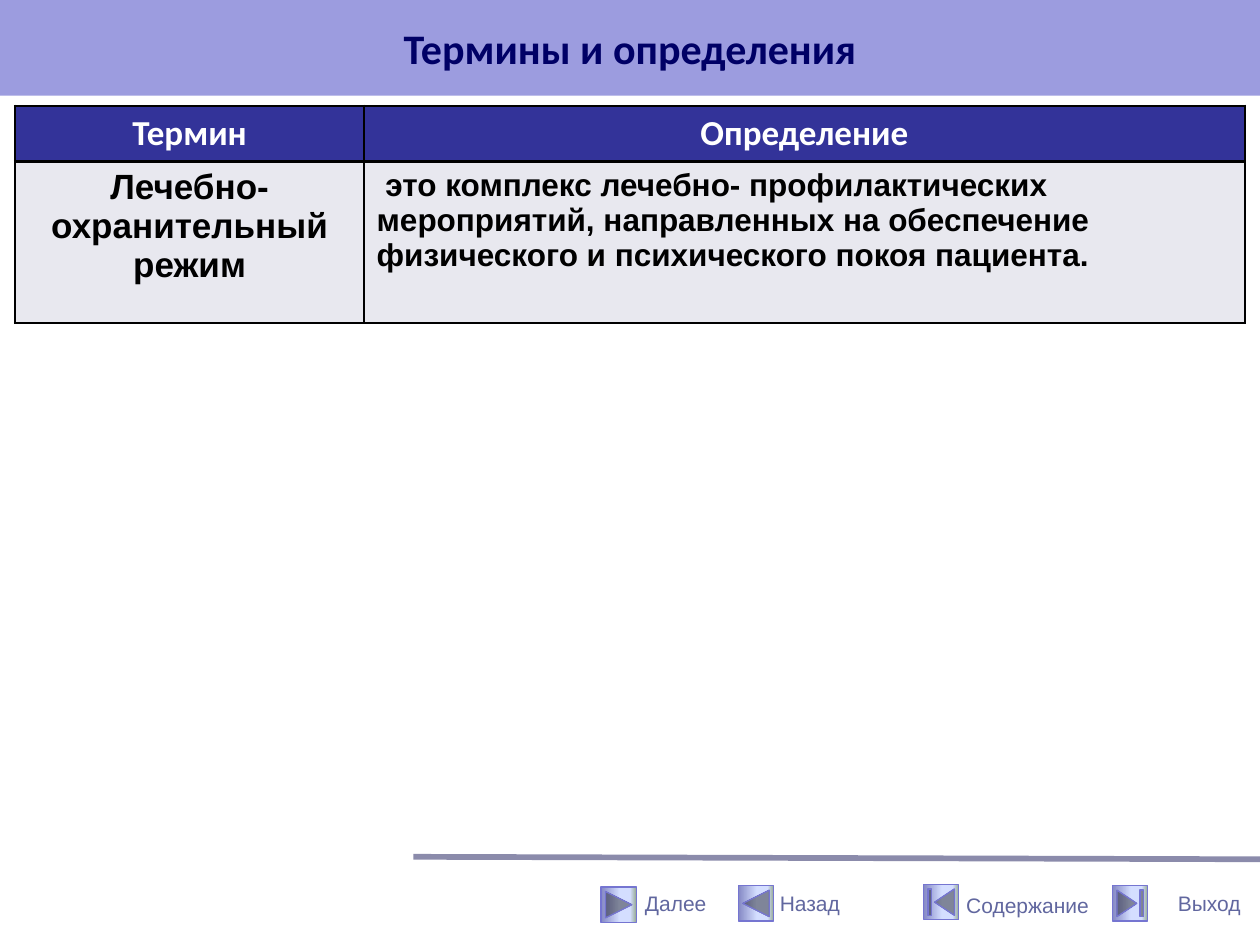
from lxml.etree import SubElement
from pptx import Presentation
from pptx.dml.color import RGBColor
from pptx.enum.shapes import MSO_CONNECTOR as Connector, MSO_SHAPE as Shape
from pptx.enum.text import MSO_ANCHOR as Anchor, MSO_AUTO_SIZE as AutoSize, PP_ALIGN as Align
from pptx.oxml.ns import qn
from pptx.util import Inches, Pt

BUTTON_SIZE = 0.28
BUTTON_STOPS = [(0, "8488C4"), (53, "D4DEFF"), (83, "D4DEFF"), (100, "96AB94")]
# button shape, button left and top, label, label box
NAVIGATION = [
    (Shape.ACTION_BUTTON_FORWARD_OR_NEXT, 4.77, 7.04, "Далее", (5.02, 7.02, 0.69, 0.3)),
    (Shape.ACTION_BUTTON_BACK_OR_PREVIOUS, 5.86, 7.03, "Назад", (6.09, 7.02, 0.68, 0.3)),
    (Shape.ACTION_BUTTON_BEGINNING, 7.33, 7.02, "Содержание", (7.57, 7.03, 1.18, 0.3)),
    (Shape.ACTION_BUTTON_END, 8.83, 7.03, "Выход", (9.25, 6.92, 0.75, 0.5)),
]
HEADERS = ["Термин", "Определение"]
TERM = "Лечебно-охранительный режим"
DEFINITION = ("это комплекс лечебно- профилактических мероприятий, "
              "направленных на обеспечение физического и психического покоя пациента.")


def color(value):
    return RGBColor.from_string(value)


def box(*lengths):
    return [Inches(length) for length in lengths]


def add_run(paragraph, text, size, font, value, bold=False):
    run = paragraph.add_run()
    run.text = text
    run.font.size = Pt(size)
    run.font.name = font
    run.font.bold = bold
    run.font.color.rgb = color(value)


def fill_title(slide):
    title = slide.shapes.title
    title.left, title.top, title.width, title.height = box(0, 0, 10, 0.76)
    title.fill.solid()
    title.fill.fore_color.rgb = color("9C9CDF")
    title.text_frame.vertical_anchor = Anchor.MIDDLE
    paragraph = title.text_frame.paragraphs[0]
    paragraph.alignment = Align.CENTER
    add_run(paragraph, "Термины и определения", 24, "Calibri", "000066", True)


def format_cell(cell, fill):
    """Draw black borders on all sides, then fill the cell."""
    properties = cell._tc.get_or_add_tcPr()
    for side in ("a:lnL", "a:lnR", "a:lnT", "a:lnB"):
        border = SubElement(properties, qn(side), w=str(Pt(1.5)))
        solid = SubElement(border, qn("a:solidFill"))
        SubElement(solid, qn("a:srgbClr"), val="000000")
    cell.fill.solid()
    cell.fill.fore_color.rgb = color(fill)


def add_terms_table(slide):
    widths, heights = (2.77, 6.99), (0.44, 1.28)
    frame = slide.shapes.add_table(2, 2, *box(0.12, 0.84, sum(widths), sum(heights)))
    table = frame.table
    for column, width in zip(table.columns, widths):
        column.width = Inches(width)
    for row, height, fill in zip(table.rows, heights, ("333399", "E8E8EF")):
        row.height = Inches(height)
        for cell in row.cells:
            format_cell(cell, fill)
            cell.text_frame.paragraphs[0].alignment = Align.CENTER

    for index, header in enumerate(HEADERS):
        paragraph = table.cell(0, index).text_frame.paragraphs[0]
        add_run(paragraph, header, 20, "Calibri", "FFFFFF", True)
    paragraph = table.cell(1, 0).text_frame.paragraphs[0]
    add_run(paragraph, TERM, 20, "Arial", "000000", True)
    paragraph = table.cell(1, 1).text_frame.paragraphs[0]
    paragraph.alignment = Align.LEFT
    add_run(paragraph, " ", 18, "Arial", "000000")
    add_run(paragraph, DEFINITION, 18, "Arial", "000000", True)


def add_footer_line(slide):
    line = slide.shapes.add_connector(Connector.STRAIGHT, *box(3.28, 6.8, 10, 6.82))
    line.line.width = Pt(3.25)
    line.line.color.rgb = color("5A5A88")
    properties = line._element.spPr
    SubElement(next(properties.iter(qn("a:srgbClr"))), qn("a:alpha"), val="70000")
    SubElement(properties, qn("a:effectLst"))


def add_button(slide, kind, left, top):
    button = slide.shapes.add_shape(kind, *box(left, top, BUTTON_SIZE, BUTTON_SIZE))
    button.shadow.inherit = False
    button.line.color.rgb = color("7575D1")
    button.line.width = Pt(0.75)
    button.fill.gradient()
    button.fill.gradient_angle = 0
    stops = next(button._element.spPr.iter(qn("a:gsLst")))
    for stop in list(stops):
        stops.remove(stop)
    for position, value in BUTTON_STOPS:
        stop = SubElement(stops, qn("a:gs"), pos=str(position * 1000))
        SubElement(stop, qn("a:srgbClr"), val=value)


def add_label(slide, text, place):
    frame = slide.shapes.add_textbox(*box(*place)).text_frame
    frame.word_wrap = False
    frame.auto_size = AutoSize.NONE
    frame.vertical_anchor = Anchor.MIDDLE
    add_run(frame.paragraphs[0], text, 12, "Arial", "61679F")


def main():
    presentation = Presentation()
    presentation.slide_width, presentation.slide_height = box(10, 7.5)
    slide = presentation.slides.add_slide(presentation.slide_layouts[5])
    add_footer_line(slide)
    for kind, left, top, label, place in NAVIGATION:
        add_button(slide, kind, left, top)
        add_label(slide, label, place)
    fill_title(slide)
    add_terms_table(slide)
    presentation.save("out.pptx")


if __name__ == "__main__":
    main()
